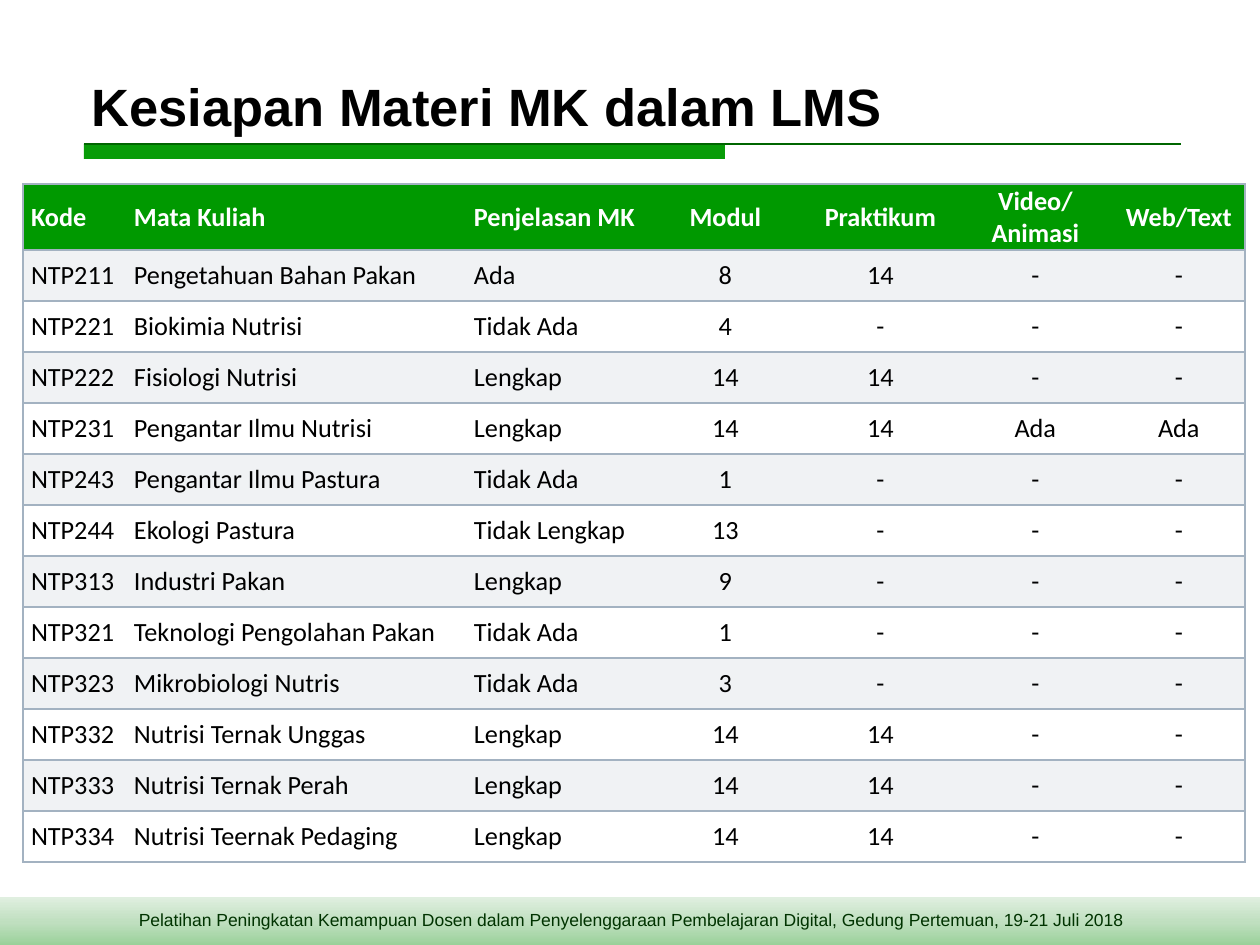
from copy import deepcopy

from lxml import etree
from pptx import Presentation
from pptx.dml.color import RGBColor
from pptx.enum.shapes import MSO_CONNECTOR, MSO_SHAPE
from pptx.enum.text import MSO_ANCHOR, PP_ALIGN
from pptx.oxml.ns import qn
from pptx.util import Emu, Pt

LEFT, CENTER = PP_ALIGN.LEFT, PP_ALIGN.CENTER
MIDDLE, BOTTOM = MSO_ANCHOR.MIDDLE, MSO_ANCHOR.BOTTOM
RECT, STRAIGHT = MSO_SHAPE.RECTANGLE, MSO_CONNECTOR.STRAIGHT

TITLE = "Kesiapan Materi MK dalam LMS"
FOOTER = ("Pelatihan Peningkatan Kemampuan Dosen dalam Penyelenggaraan "
          "Pembelajaran Digital, Gedung Pertemuan, 19-21 Juli 2018")
COURSES = [
    ("Kode", "Mata Kuliah", "Penjelasan MK", "Modul", "Praktikum", "Video/ Animasi", "Web/Text"),
    ("NTP211", "Pengetahuan Bahan Pakan", "Ada", "8", "14", "-", "-"),
    ("NTP221", "Biokimia Nutrisi", "Tidak Ada", "4", "-", "-", "-"),
    ("NTP222", "Fisiologi Nutrisi", "Lengkap", "14", "14", "-", "-"),
    ("NTP231", "Pengantar Ilmu Nutrisi", "Lengkap", "14", "14", "Ada", "Ada"),
    ("NTP243", "Pengantar Ilmu Pastura", "Tidak Ada", "1", "-", "-", "-"),
    ("NTP244", "Ekologi Pastura", "Tidak Lengkap", "13", "-", "-", "-"),
    ("NTP313", "Industri Pakan", "Lengkap", "9", "-", "-", "-"),
    ("NTP321", "Teknologi Pengolahan Pakan", "Tidak Ada", "1", "-", "-", "-"),
    ("NTP323", "Mikrobiologi Nutris", "Tidak Ada", "3", "-", "-", "-"),
    ("NTP332", "Nutrisi Ternak Unggas", "Lengkap", "14", "14", "-", "-"),
    ("NTP333", "Nutrisi Ternak Perah", "Lengkap", "14", "14", "-", "-"),
    ("NTP334", "Nutrisi Teernak Pedaging", "Lengkap", "14", "14", "-", "-"),
]
COL_WIDTHS = [110, 340, 175, 155, 155, 155, 132]
HEADER_H, ROW_H = 66, 51
LEFT_COLS = 3  # the columns after these are centred
NO_STYLE = "{2D5ABB26-0587-4C30-8999-92F81FD0307C}"

COLORS = {
    "green": "009900", "rule": "006600", "footer": "003300", "border": "A3B2C1",
    "band": "F0F2F4", "white": "FFFFFF", "black": "000000",
}
FOOTER_GRADIENT = ["E0EFE0", "BFDFBF", "95CF95"]


def px(n):
    return Emu(round(n * 914400 / 126))


def rgb(name):
    return RGBColor.from_string(COLORS[name])


def format_text(p, font, size, color, bold=False, align=LEFT):
    p.alignment = align
    f = p.runs[0].font
    f.name, f.size, f.bold = font, Pt(size), bold
    f.color.rgb = rgb(color)


def add_text(s, box, text, anchor, *style):
    tf = s.shapes.add_textbox(*map(px, box)).text_frame
    tf.word_wrap = True
    tf.vertical_anchor = anchor
    tf.text = text
    format_text(tf.paragraphs[0], *style)


def add_rect(s, box):
    sp = s.shapes.add_shape(RECT, *map(px, box))
    sp.shadow.inherit = False
    sp.line.fill.background()
    return sp


def add_title_rule(s):
    sp = add_rect(s, (84, 144, 641, 15))
    sp.fill.solid()
    sp.fill.fore_color.rgb = rgb("green")
    clr = next(sp._element.spPr.iter(qn("a:srgbClr")))
    etree.SubElement(clr, qn("a:alpha"), val="97000")
    line = s.shapes.add_connector(STRAIGHT, px(84), px(144), px(1181), px(144))
    line.line.color.rgb = rgb("rule")
    line.line.width = Pt(0.75)
    etree.SubElement(line._element.spPr, qn("a:effectLst"))


def add_footer_band(s):
    sp = add_rect(s, (0, 897, 1262, 51))
    sp.fill.gradient()
    sp.fill.gradient_angle = 270
    first = next(sp._element.spPr.iter(qn("a:gs")))
    middle = deepcopy(first)
    middle.set("pos", "50000")
    first.addnext(middle)
    for stop, color in zip(sp.fill.gradient_stops, FOOTER_GRADIENT):
        stop.color.rgb = RGBColor.from_string(color)


def add_borders(cell, sides):
    """Draw the named sides (from L, R, T, B, in that order) before the fill."""
    tcPr = cell._tc.get_or_add_tcPr()
    for i, side in enumerate(sides):
        ln = etree.Element(qn("a:ln" + side), w=str(Pt(1)))
        fill = etree.SubElement(ln, qn("a:solidFill"))
        etree.SubElement(fill, qn("a:srgbClr"), val=COLORS["border"])
        tcPr.insert(i, ln)


def add_course_table(s):
    height = HEADER_H + ROW_H * (len(COURSES) - 1)
    last = len(COL_WIDTHS) - 1
    frame = s.shapes.add_table(len(COURSES), len(COL_WIDTHS), px(23), px(184),
                               px(sum(COL_WIDTHS)), px(height))
    table = frame.table
    table._tbl.tblPr.find(qn("a:tableStyleId")).text = NO_STYLE
    for col, width in zip(table.columns, COL_WIDTHS):
        col.width = px(width)
    for r, values in enumerate(COURSES):
        header = r == 0
        table.rows[r].height = px(HEADER_H if header else ROW_H)
        fill = "green" if header else "band" if r % 2 else "white"
        for c, value in enumerate(values):
            cell = table.cell(r, c)
            cell.vertical_anchor = MIDDLE
            cell.margin_left = cell.margin_right = cell.margin_top = px(1)
            cell.margin_bottom = 0
            cell.fill.solid()
            cell.fill.fore_color.rgb = rgb(fill)
            add_borders(cell, {0: "LTB", last: "RTB"}.get(c, "TB"))
            cell.text = value
            p = cell.text_frame.paragraphs[0]
            format_text(p, "Calibri", 15, "white" if header else "black", header,
                        LEFT if c < LEFT_COLS else CENTER)
            if c == 0:
                p._p.get_or_add_pPr().set("indent", str(px(7)))


def main():
    prs = Presentation()
    prs.slide_width, prs.slide_height = px(1260), px(945)
    s = prs.slides.add_slide(prs.slide_layouts[6])
    add_title_rule(s)
    add_footer_band(s)
    add_text(s, (23, 903, 1215, 34), FOOTER, MSO_ANCHOR.TOP,
             "Arial", 10, "footer", False, CENTER)
    add_text(s, (79, 42, 1102, 101), TITLE, BOTTOM, "Arial", 30, "black", True)
    add_course_table(s)
    prs.save("out.pptx")


if __name__ == "__main__":
    main()
